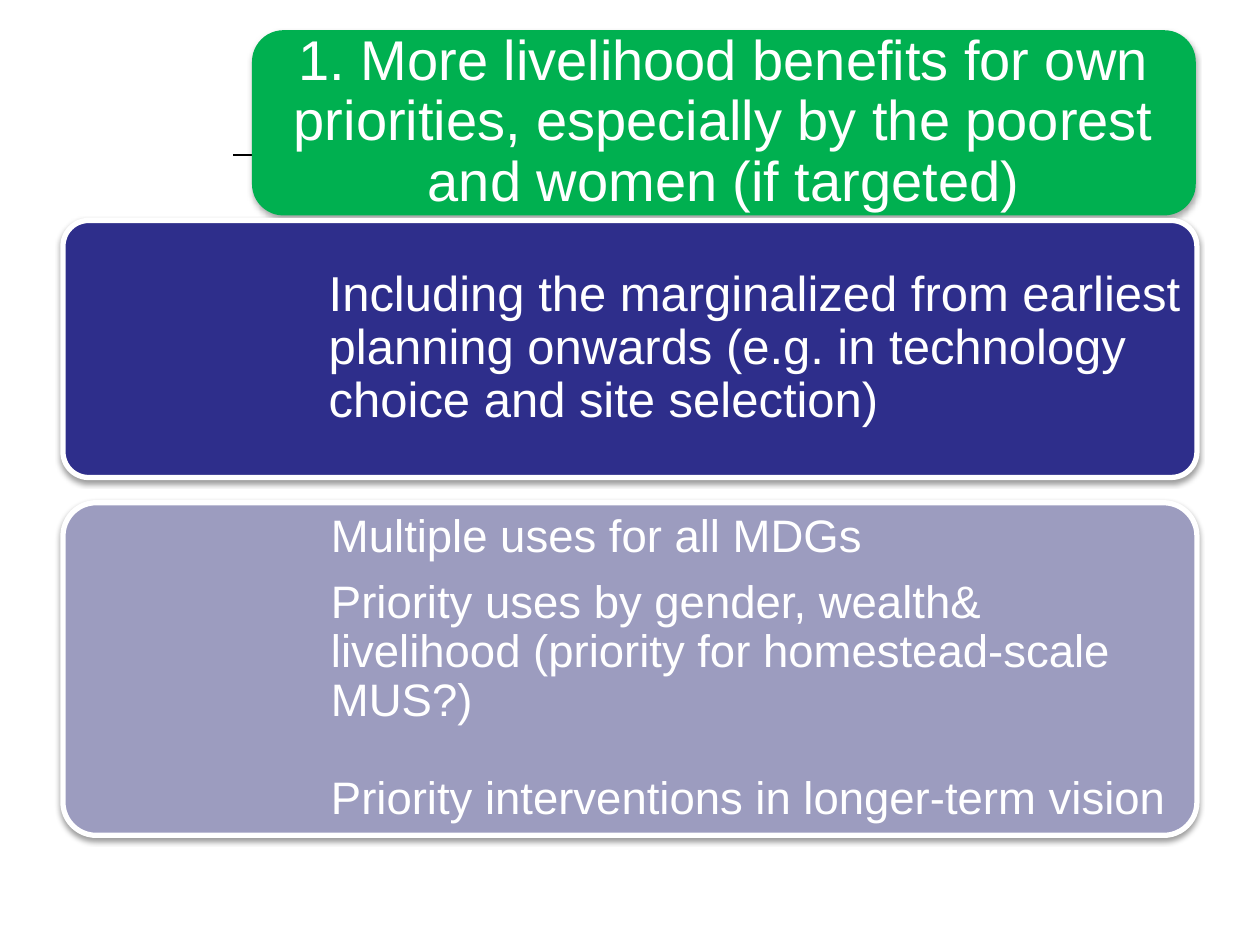
from lxml import etree
from pptx import Presentation
from pptx import util as u
from pptx.dml.color import RGBColor
from pptx.enum import shapes, text
from pptx.oxml import ns

WHITE = "FFFFFF"
TITLE = ("1. More livelihood benefits for own priorities, "
         "especially by the poorest and women (if targeted)")
PLAN = ("Including the marginalized from earliest planning onwards "
        "(e.g. in technology choice and site selection)")
USES = ["Multiple uses for all MDGs",
        "Priority uses by gender, wealth& livelihood "
        "(priority for homestead-scale MUS?)",
        "Priority interventions in longer-term vision"]


def paint(fmt, color):
    """Give a fill or font colour format a solid hex colour."""
    fmt.rgb = RGBColor.from_string(color)


def shade(card, alpha, dist):
    """Give a shape a soft shadow straight below it."""
    card.shadow.inherit = False
    effects = card._element.spPr.find(ns.qn("a:effectLst"))
    cast = etree.SubElement(effects, ns.qn("a:outerShdw"), blurRad=str(u.Pt(3.1)),
                            dist=str(u.Pt(dist)), dir="5400000", rotWithShape="0")
    tint = etree.SubElement(cast, ns.qn("a:srgbClr"), val="000000")
    etree.SubElement(tint, ns.qn("a:alpha"), val=str(alpha * 1000))


def write(frame, lines, size, align, gaps):
    """Fill a text frame with one paragraph per line."""
    for i, line in enumerate(lines):
        para = frame.paragraphs[0] if i == 0 else frame.add_paragraph()
        para.text = line
        look = {"alignment": align, "line_spacing": 0.9,
                "space_after": u.Pt(gaps[i])}
        for name, value in look.items():
            setattr(para, name, value)
        para.font.name, para.font.size = "Arial", u.Pt(size)
        paint(para.font.color, WHITE)


def panel(slide, box, fill, bend, pads):
    """Place a rounded panel in the box and return it ready for text."""
    card = slide.shapes.add_shape(shapes.MSO_SHAPE.ROUNDED_RECTANGLE,
                                  *map(u.Inches, box))
    card.adjustments[0] = bend
    card.fill.solid()
    paint(card.fill.fore_color, fill)
    frame = card.text_frame
    left, side = map(u.Inches, pads)
    look = {"word_wrap": True, "vertical_anchor": text.MSO_ANCHOR.MIDDLE,
            "margin_left": left, "margin_right": side,
            "margin_top": side, "margin_bottom": side}
    for name, value in look.items():
        setattr(frame, name, value)
    return card


def rule(slide, left, right, top):
    """Draw the thin line that runs behind the heading."""
    line = slide.shapes.add_connector(
        shapes.MSO_CONNECTOR.STRAIGHT,
        *map(u.Inches, (left, top, right, top)))
    line.line.width = u.Pt(0.75)
    paint(line.line.color, "000000")
    etree.SubElement(line._element.spPr, ns.qn("a:effectLst"))


def heading(slide, box):
    """Place the green heading in the box."""
    card = panel(slide, box, "00B050", 0.17, (0.06, 0.06))
    card.line.fill.background()
    shade(card, 35, 1.8)
    write(card.text_frame, [TITLE], 32, text.PP_ALIGN.CENTER, [11])


def point(slide, box, fill, lines, size, gaps):
    """Place a white-edged panel of left-aligned lines in the box."""
    card = panel(slide, box, fill, 0.1, (2.05, 0.05))
    card.line.width = u.Pt(3)
    paint(card.line.color, WHITE)
    shade(card, 38, 1.6)
    write(card.text_frame, lines, size, text.PP_ALIGN.LEFT, gaps)


def main():
    """Build the slide and save it."""
    deck = Presentation()
    deck.slide_width, deck.slide_height = u.Inches(10), u.Inches(7.5)
    slide = deck.slides.add_slide(deck.slide_layouts[6])
    rule(slide, 1.85, 9.17, 1.23)
    heading(slide, (2, 0.24, 7.49, 1.47))
    point(slide, (0.5, 1.75, 9, 2.04), "2E2E8B", [PLAN], 28, [10])
    point(slide, (0.5, 3.99, 9, 2.64), "9C9CBF", USES, 26, [9.5, 28, 9.5])
    deck.save("out.pptx")


if __name__ == "__main__":
    main()
